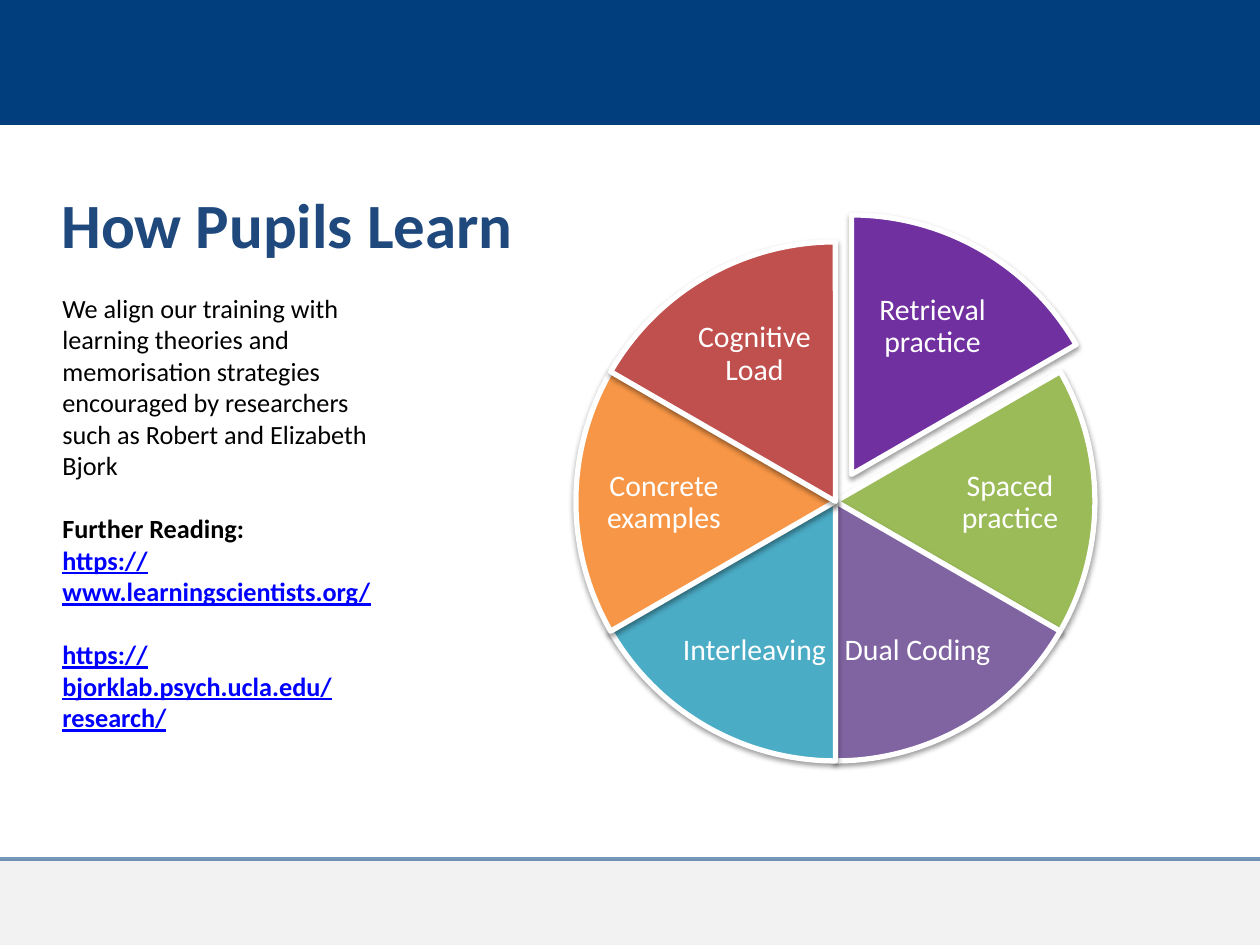
from lxml.etree import SubElement
from pptx import Presentation
from pptx.dml.color import RGBColor
from pptx.enum.shapes import MSO_CONNECTOR as Connector, MSO_SHAPE as Shape
from pptx.enum.text import MSO_ANCHOR as Anchor, PP_ALIGN as Align
from pptx.oxml.ns import qn
from pptx.util import Pt

PX = 7257.14
WIDTH, HEIGHT = 1260, 945
FONT = "Calibri"
COLORS = {
    "navy": "003E7E", "gray": "808080", "title": "1F497D", "black": "000000",
    "white": "FFFFFF", "link": "0000FF", "violet": "7030A0", "green": "9BBB59",
    "purple": "8064A2", "teal": "4BACC6", "orange": "F79646", "red": "C0504D",
}


def px(*values):
    return [round(value * PX) for value in values]


def rgb(name):
    return RGBColor.from_string(COLORS[name])


def set_alpha(shape, percent):
    for color in shape._element.spPr.iter(qn("a:srgbClr")):
        SubElement(color, qn("a:alpha"), val=str(percent * 1000))


class SlideBuilder:
    def __init__(self):
        self.deck = Presentation()
        self.deck.slide_width, self.deck.slide_height = px(WIDTH, HEIGHT)
        self.page = self.deck.slides.add_slide(self.deck.slide_layouts[6])

    def shape(self, kind, place, color):
        shape = self.page.shapes.add_shape(kind, *px(*place))
        shape.shadow.inherit = False
        shape.fill.solid()
        shape.fill.fore_color.rgb = rgb(color)
        shape.line.fill.background()
        return shape

    def rule(self, y, color, width, alpha):
        line = self.page.shapes.add_connector(Connector.STRAIGHT, *px(0, y, WIDTH, y))
        line.line.color.rgb = rgb(color)
        line.line.width = Pt(width)
        set_alpha(line, alpha)
        SubElement(line._element.spPr, qn("a:effectLst"))

    def slice(self, place, start, sweep, color):
        pie = self.shape(Shape.PIE, place, color)
        pie.adjustments[0] = start % 360 * 0.6
        pie.adjustments[1] = (start + sweep) % 360 * 0.6
        pie.line.color.rgb = rgb("white")
        pie.line.width = Pt(3)
        effects = pie._element.spPr.find(qn("a:effectLst"))
        shadow = SubElement(effects, qn("a:outerShdw"), blurRad="40000", dist="20000",
                            dir="5400000", rotWithShape="0")
        shade = SubElement(shadow, qn("a:srgbClr"), val=COLORS["black"])
        SubElement(shade, qn("a:alpha"), val="38000")

    def text(self, place, lines, size, anchor=Anchor.TOP, align=Align.LEFT,
             spacing=None, inset=None):
        box = self.page.shapes.add_textbox(*px(*place))
        frame = box.text_frame
        frame.word_wrap = True
        frame.vertical_anchor = anchor
        if inset is not None:
            margin, = px(inset)
            frame.margin_left = frame.margin_right = margin
            frame.margin_top = frame.margin_bottom = margin
        for index, (words, color, bold, underline, before) in enumerate(lines):
            para = frame.add_paragraph() if index else frame.paragraphs[0]
            para.text = words
            para.alignment = align
            para.line_spacing = spacing
            para.space_before = Pt(before)
            font = para.font
            font.name, font.size = FONT, Pt(size)
            font.bold, font.underline = bold, underline
            font.color.rgb = rgb(color)

    def label(self, place, words):
        self.text(place, [(words, "white", False, False, 0)], 17, Anchor.MIDDLE,
                  Align.CENTER, 0.9, 2)


def main():
    slide = SlideBuilder()
    slide.shape(Shape.RECTANGLE, (0, 0, WIDTH, 125), "navy")
    footer = slide.shape(Shape.RECTANGLE, (0, 859, WIDTH, 86), "gray")
    set_alpha(footer, 10)
    slide.rule(859, "navy", 2.25, 52)

    slide.text((49, 155, 1086, 137), [("How Pupils Learn", "title", True, False, 0)],
               36, Anchor.MIDDLE)

    wheel, pulled_out = (576, 242, 519, 519), (592, 215, 519, 519)
    strategies = [
        ("Retrieval practice", "violet", pulled_out, (857, 271, 151, 111)),
        ("Spaced practice", "green", wheel, (931, 450, 158, 105)),
        ("Dual Coding", "purple", wheel, (842, 595, 151, 111)),
        ("Interleaving", "teal", wheel, (679, 595, 151, 111)),
        ("Concrete examples", "orange", wheel, (585, 450, 158, 105)),
        ("Cognitive Load", "red", wheel, (679, 299, 151, 111)),
    ]
    sweep = 360 // len(strategies)
    for index, (words, color, circle, label_place) in enumerate(strategies):
        slide.slice(circle, 270 + index * sweep, sweep, color)
        slide.label(label_place, words)

    slide.text((50, 286, 353, 449), [
        ("We align our training with learning theories and memorisation strategies "
         "encouraged by researchers such as Robert and Elizabeth Bjork",
         "black", False, False, 0),
        ("Further Reading:", "black", True, False, 18),
        ("https://www.learningscientists.org/", "link", True, True, 0),
        ("https://bjorklab.psych.ucla.edu/research/", "link", True, True, 18),
    ], 15)

    slide.deck.save("out.pptx")


if __name__ == "__main__":
    main()
